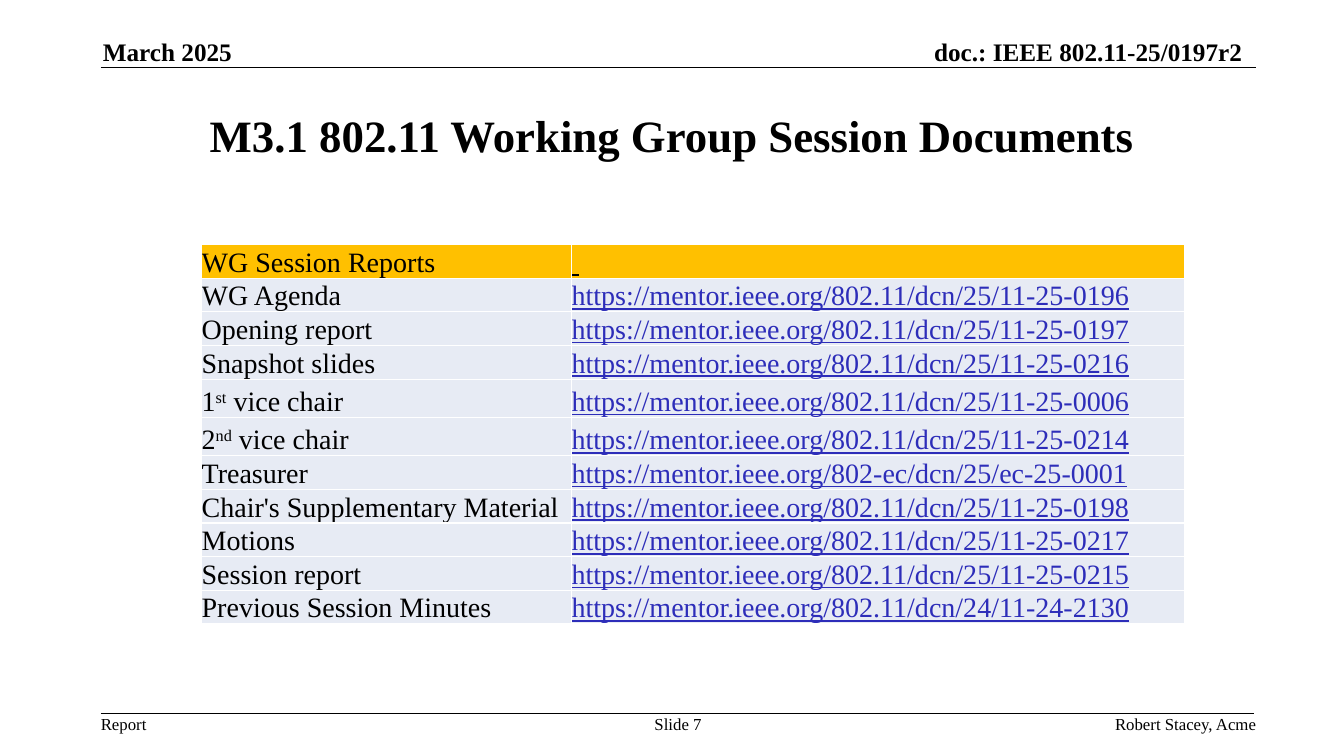
from pptx import Presentation
from pptx.dml.color import RGBColor as RGB
from pptx.enum.shapes import MSO_CONNECTOR as LINE
from pptx.enum.text import MSO_ANCHOR as ANCHOR, PP_ALIGN as ALIGN
from pptx.oxml import parse_xml
from pptx.oxml.ns import nsdecls
from pptx.util import Inches, Pt

COLORS = {"ink": "000000", "link": "2D2DB9", "head": "FFC000",
          "body": "E7EBF4", "rule": "FFFFFF"}
FONT = "Times New Roman"
BASE = "https://mentor.ieee.org/"

# Odd parts of a label are superscript.
REPORTS = [
    (["WG Agenda"], "802.11/dcn/25/11-25-0196"),
    (["Opening report"], "802.11/dcn/25/11-25-0197"),
    (["Snapshot slides"], "802.11/dcn/25/11-25-0216"),
    (["1", "st", " vice chair"], "802.11/dcn/25/11-25-0006"),
    (["2", "nd", " vice chair"], "802.11/dcn/25/11-25-0214"),
    (["Treasurer"], "802-ec/dcn/25/ec-25-0001"),
    (["Chair's Supplementary Material"], "802.11/dcn/25/11-25-0198"),
    (["Motions"], "802.11/dcn/25/11-25-0217"),
    (["Session report"], "802.11/dcn/25/11-25-0215"),
    (["Previous Session Minutes"], "802.11/dcn/24/11-24-2130"),
]


def color(name):
    return RGB.from_string(COLORS[name])


def add_run(para, text, size, ink="ink", **style):
    run = para.add_run()
    run.text = text
    run.font.color.rgb = color(ink)
    for key, value in {"name": FONT, "size": Pt(size), **style}.items():
        setattr(run.font, key, value)
    return run


def add_text(slide, text, box, size, align, anchor, bold=False, wrap=False):
    frame = slide.shapes.add_textbox(*map(Inches, box)).text_frame
    layout = {"word_wrap": wrap, "vertical_anchor": anchor, "margin_left": 0,
              "margin_right": 0, "margin_top": 0, "margin_bottom": 0}
    for key, value in layout.items():
        setattr(frame, key, value)
    para = frame.paragraphs[0]
    para.alignment = align
    add_run(para, text, size, bold=bold)


def add_rule(slide, y, right):
    line = slide.shapes.add_connector(
        LINE.STRAIGHT, Inches(1), Inches(y), Inches(right), Inches(y))
    line.line.color.rgb = color("ink")
    line.line.width = Pt(1)
    line._element.spPr.append(parse_xml(f"<a:effectLst {nsdecls('a')}/>"))


def fill_cell(cell, parts, fill, ink="ink", underline=False):
    layout = {"vertical_anchor": ANCHOR.BOTTOM, "margin_left": 0,
              "margin_right": 0, "margin_top": 0, "margin_bottom": 0}
    for key, value in layout.items():
        setattr(cell, key, value)
    cell.fill.solid()
    cell.fill.fore_color.rgb = color(fill)
    props = cell._tc.get_or_add_tcPr()
    for at, side in enumerate("LRTB"):
        props.insert(at, parse_xml(
            f'<a:ln{side} {nsdecls("a")} w="12700"><a:solidFill>'
            f'<a:srgbClr val="{COLORS["rule"]}"/></a:solidFill></a:ln{side}>'))
    para = cell.text_frame.paragraphs[0]
    for at, part in enumerate(parts):
        run = add_run(para, part, 20, ink, bold=False, underline=underline)
        if at % 2:
            run._r.get_or_add_rPr().set("baseline", "30000")


def add_reports(slide):
    box = map(Inches, (2, 2.42, 9.75, 3.78))
    table = slide.shapes.add_table(len(REPORTS) + 1, 2, *box).table
    table.first_row = table.horz_banding = False
    for col, width in zip(table.columns, (3.67, 6.08)):
        col.width = Inches(width)
    table.rows[0].height = Inches(0.34)
    fill_cell(table.cell(0, 0), ["WG Session Reports"], "head")
    fill_cell(table.cell(0, 1), [" "], "head", underline=True)
    for at, (label, link) in enumerate(REPORTS, 1):
        table.rows[at].height = Inches(0.38 if len(label) > 1 else 0.33)
        fill_cell(table.cell(at, 0), label, "body")
        fill_cell(table.cell(at, 1), [BASE + link], "body", "link", True)


def main():
    deck = Presentation()
    deck.slide_width, deck.slide_height = Inches(13.33), Inches(7.5)
    slide = deck.slides.add_slide(deck.slide_layouts[6])
    add_rule(slide, 0.67, 12.46)
    add_rule(slide, 7.08, 12.44)
    add_text(slide, "March 2025", (1.02, 0.36, 1.69, 0.3), 18,
             ALIGN.LEFT, ANCHOR.BOTTOM, bold=True)
    add_text(slide, "doc.: IEEE 802.11-25/0197r2", (8.6, 0.36, 3.72, 0.3), 18,
             ALIGN.RIGHT, ANCHOR.BOTTOM, bold=True)
    add_text(slide, "M3.1 802.11 Working Group Session Documents",
             (1, 0.75, 11.33, 1.17), 32, ALIGN.CENTER, ANCHOR.MIDDLE,
             bold=True, wrap=True)
    add_reports(slide)
    for text, left, width, align in (
            ("Report", 1, 0.46, ALIGN.LEFT),
            ("Slide 7", 6.43, 0.59, ALIGN.CENTER),
            ("Robert Stacey, Acme", 10.09, 2.37, ALIGN.RIGHT)):
        add_text(slide, text, (left, 7.08, width, 0.2), 12, align, ANCHOR.TOP)
    deck.save("out.pptx")


if __name__ == "__main__":
    main()
